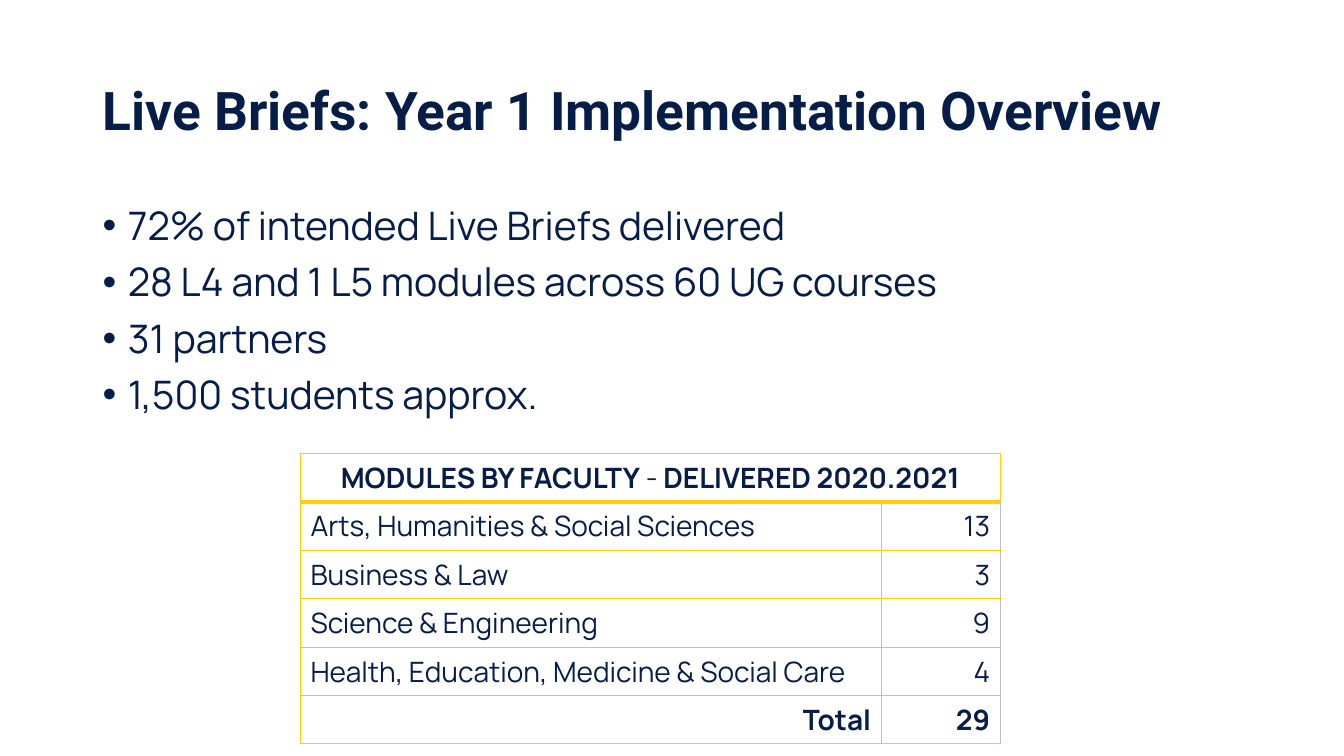
from dataclasses import dataclass

from lxml import etree
from pptx import Presentation, util as u
from pptx.dml.color import RGBColor
from pptx.enum import text
from pptx.oxml.ns import qn

# Content
TITLE = "Live Briefs: Year 1 Implementation Overview"
BULLETS = [
    "72% of intended Live Briefs delivered",
    "28 L4 and 1 L5 modules across 60 UG courses",
    "31 partners",
    "1,500 students approx.",
]
HEADING = [("MODULES BY FACULTY", True), (" - ", False), ("DELIVERED 2020.2021", True)]
FACULTIES = [
    ("Arts, Humanities & Social Sciences", 13),
    ("Business & Law", 3),
    ("Science & Engineering", 9),
    ("Health, Education, Medicine & Social Care", 4),
]
ROWS = FACULTIES + [("Total", sum(count for _, count in FACULTIES))]


@dataclass(frozen=True)
class Theme:
    title_font: str = "Roboto"
    body_font: str = "Manrope"
    title_ink: str = "061D48"
    ink: str = "071D49"
    gold: str = "FFD000"
    grey: str = "BFBFBF"
    title_size: int = 38
    bullet_size: int = 28
    table_size: int = 20


THEME = Theme()

# Layout, in inches
WIDTH, HEIGHT = 13.33, 7.5
MARGIN, CONTENT_WIDTH = 0.92, 11.5
TABLE_LEFT, TABLE_TOP = 2.98, 4.5
COLUMNS, ROW_HEIGHT = (5.76, 1.18), 0.48
INDENT = u.Inches(0.25)


def style(font, name, size, color, bold=False):
    font.name, font.size, font.bold = name, u.Pt(size), bold
    font.color.rgb = RGBColor.from_string(color)


def add_text_box(page, top, height):
    box = page.shapes.add_textbox(
        u.Inches(MARGIN), u.Inches(top), u.Inches(CONTENT_WIDTH), u.Inches(height))
    box.text_frame.word_wrap = True
    return box.text_frame


def set_border(cell, side, color, points=1):
    line = etree.SubElement(cell._tc.get_or_add_tcPr(), qn("a:ln" + side), w=str(u.Pt(points)))
    fill = etree.SubElement(line, qn("a:solidFill"))
    etree.SubElement(fill, qn("a:srgbClr"), val=color)


def row_line(row):
    """Colour and width of the line under a table row."""
    if row == 0:
        return THEME.gold, 3
    return (THEME.grey if row in (3, 4) else THEME.gold), 1


deck = Presentation()
deck.slide_width, deck.slide_height = u.Inches(WIDTH), u.Inches(HEIGHT)
page = deck.slides.add_slide(deck.slide_layouts[6])

# Title
frame = add_text_box(page, 0.4, 1.45)
frame.vertical_anchor = text.MSO_ANCHOR.MIDDLE
para = frame.paragraphs[0]
para.text, para.line_spacing = TITLE, 0.9
style(para.font, THEME.title_font, THEME.title_size, THEME.title_ink, True)

# Table of modules by faculty
row_count = len(ROWS) + 1
table = page.shapes.add_table(
    row_count, len(COLUMNS), u.Inches(TABLE_LEFT), u.Inches(TABLE_TOP),
    u.Inches(sum(COLUMNS)), u.Inches(ROW_HEIGHT * row_count)).table
table.horz_banding = table.first_row = False
for column, width in zip(table.columns, COLUMNS):
    column.width = u.Inches(width)
for row in table.rows:
    row.height = u.Inches(ROW_HEIGHT)

table.cell(0, 0).merge(table.cell(0, 1))
para = table.cell(0, 0).text_frame.paragraphs[0]
para.alignment = text.PP_ALIGN.CENTER
for words, bold in HEADING:
    span = para.add_run()
    span.text = words
    style(span.font, THEME.body_font, THEME.table_size, THEME.ink, bold)

for r, values in enumerate(ROWS, 1):
    total = r == len(ROWS)
    for c, value in enumerate(values):
        cell = table.cell(r, c)
        cell.vertical_anchor = text.MSO_ANCHOR.MIDDLE
        para = cell.text_frame.paragraphs[0]
        para.text = str(value)
        para.alignment = text.PP_ALIGN.RIGHT if c or total else text.PP_ALIGN.LEFT
        style(para.font, THEME.body_font, THEME.table_size, THEME.ink, total)

# Table borders come before the fill in each cell
for r in range(row_count):
    for c in range(len(COLUMNS)):
        cell = table.cell(r, c)
        side_color = THEME.grey if r else THEME.gold
        set_border(cell, "L", side_color if c else THEME.gold)
        set_border(cell, "R", side_color)
        set_border(cell, "T", *(row_line(r - 1) if r else (THEME.gold, 1)))
        set_border(cell, "B", *row_line(r))
        cell.fill.background()

# Bullets
frame = add_text_box(page, 2, 4.76)
for i, words in enumerate(BULLETS):
    para = frame.add_paragraph() if i else frame.paragraphs[0]
    para.text = words
    para.line_spacing, para.space_after = 0.9, u.Pt(10)
    props = para._p.get_or_add_pPr()
    props.set("marL", str(INDENT))
    props.set("indent", str(-INDENT))
    etree.SubElement(props, qn("a:buFont"), typeface="Arial")
    etree.SubElement(props, qn("a:buChar"), char="•")
    style(para.font, THEME.body_font, THEME.bullet_size, THEME.ink)

deck.save("out.pptx")
